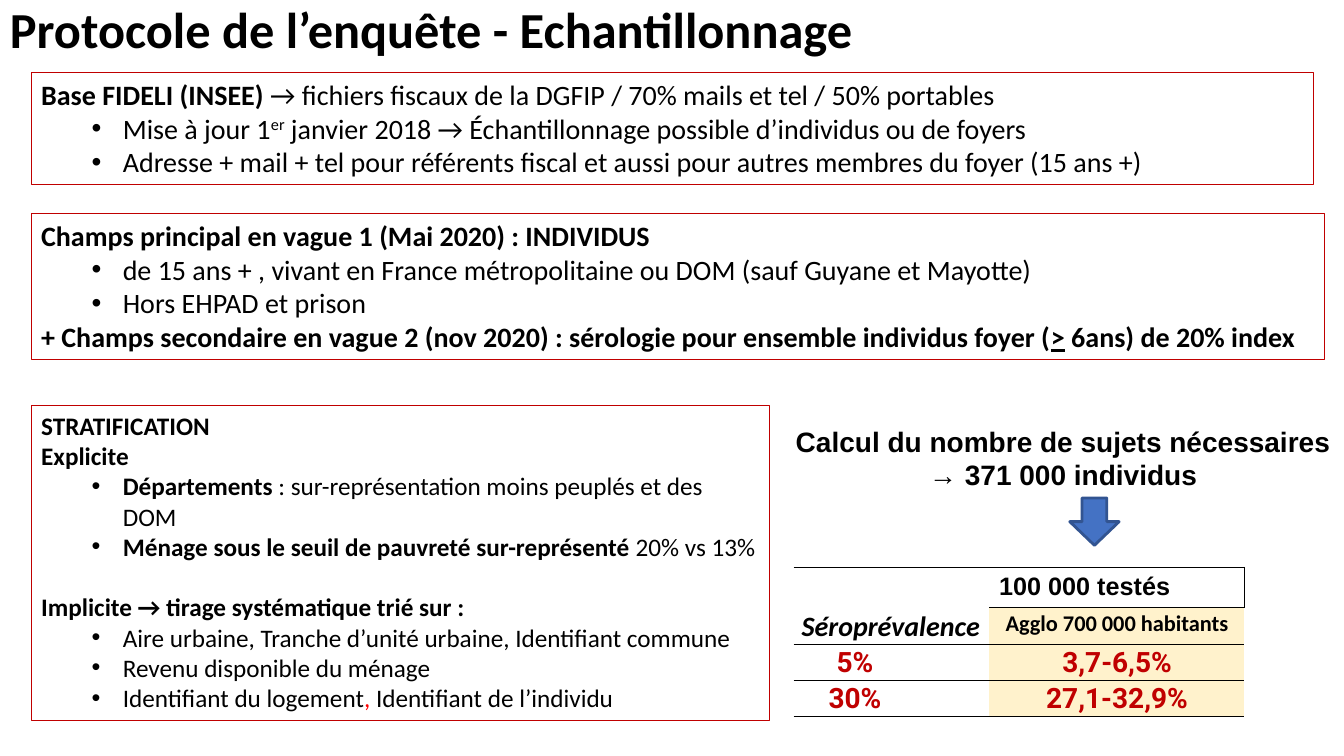
import pptx
import pptx.dml.color
import pptx.enum.shapes
import pptx.enum.text
import pptx.oxml
import pptx.oxml.ns
import pptx.util

PX = 9144  # 100 px to the inch
BLACK, RED, CREAM = "000000", "C00000", "FFF2CC"
LEFT, CENTER = pptx.enum.text.PP_ALIGN.LEFT, pptx.enum.text.PP_ALIGN.CENTER
BOLD = {"bold": True}
SHAPES = pptx.enum.shapes.MSO_SHAPE


def px(length):
    return pptx.util.Emu(length * PX)


def rgb(hex_color):
    return pptx.dml.color.RGBColor.from_string(hex_color)


def drawing_xml(tag, body="", attributes=""):
    return pptx.oxml.parse_xml(
        f'<a:{tag} {pptx.oxml.ns.nsdecls("a")} {attributes}>{body}</a:{tag}>')


def line(*runs, **style):
    """One paragraph: runs are strings or (text, run style) pairs."""
    return runs, style


def bullet(*runs, **style):
    return line(*runs, bulleted=True, **style)


class SlideBuilder:
    def __init__(self, slide, font="Calibri", color=BLACK):
        self.slide, self.font, self.color = slide, font, color

    def paragraph(self, frame, index, runs, size, font=None, color=None, bold=None,
                  italic=None, align=LEFT, spacing=None, before=0, bulleted=False):
        paragraph = frame.paragraphs[0] if index == 0 else frame.add_paragraph()
        paragraph.alignment = align
        paragraph.space_before = pptx.util.Pt(before)
        if spacing:
            paragraph.line_spacing = spacing
        if bulleted:
            properties = paragraph._p.get_or_add_pPr()
            properties.set("marL", str(81 * PX))
            properties.set("indent", str(-31 * PX))
            properties.append(drawing_xml("buFont", attributes='typeface="Arial"'))
            properties.append(drawing_xml("buChar", attributes='char="•"'))
        paragraph.font.name = font or self.font
        paragraph.font.size = pptx.util.Pt(size)
        paragraph.font.color.rgb = rgb(color or self.color)
        paragraph.font.bold = bold
        paragraph.font.italic = italic
        for content in runs:
            text, style = (content, {}) if isinstance(content, str) else content
            run = paragraph.add_run()
            run.text = text
            run.font.bold = style.get("bold")
            run.font.underline = style.get("underline")
            if "color" in style:
                run.font.color.rgb = rgb(style["color"])
            if "baseline" in style:
                run._r.get_or_add_rPr().set("baseline", style["baseline"])

    def fill_text(self, frame, lines, **shared):
        frame.word_wrap = True
        frame.vertical_anchor = pptx.enum.text.MSO_ANCHOR.TOP
        for index, (runs, style) in enumerate(lines):
            self.paragraph(frame, index, runs, **{**shared, **style})

    def text(self, box, lines, **shared):
        label = self.slide.shapes.add_textbox(*map(px, box))
        self.fill_text(label.text_frame, lines, **shared)

    def shape(self, kind, box, outline, width, fill=None):
        shape = self.slide.shapes.add_shape(kind, *map(px, box))
        shape.shadow.inherit = False
        if fill:
            shape.fill.solid()
            shape.fill.fore_color.rgb = rgb(fill)
        else:
            shape.fill.background()
        shape.line.color.rgb = rgb(outline)
        shape.line.width = pptx.util.Pt(width)
        return shape

    def framed_text(self, box, lines, **shared):
        frame = self.shape(SHAPES.RECTANGLE, box, RED, 0.75)
        self.fill_text(frame.text_frame, lines, **shared)

    def table(self, left, top, widths, heights):
        table = self.slide.shapes.add_table(
            len(heights), len(widths), px(left), px(top),
            px(sum(widths)), px(sum(heights))).table
        table.first_row = table.horz_banding = False
        for column, width in zip(table.columns, widths):
            column.width = px(width)
        for row, height in zip(table.rows, heights):
            row.height = px(height)
        return table

    def cell(self, cell, content, borders, insets, fill=None):
        properties = cell._tc.get_or_add_tcPr()
        for side in "LRTB":
            if side in borders:
                stroke = f'<a:solidFill><a:srgbClr val="{BLACK}"/></a:solidFill>'
            else:
                stroke = "<a:noFill/>"
            properties.append(drawing_xml(f"ln{side}", stroke, 'w="12700"'))
        if fill:
            cell.fill.solid()
            cell.fill.fore_color.rgb = rgb(fill)
        else:
            cell.fill.background()
        (cell.margin_left, cell.margin_top,
         cell.margin_right, cell.margin_bottom) = map(px, insets)
        if content:
            self.fill_text(cell.text_frame, [content])


def main():
    presentation = pptx.Presentation()
    presentation.slide_width, presentation.slide_height = px(1333), px(750)
    builder = SlideBuilder(
        presentation.slides.add_slide(presentation.slide_layouts[6]))

    # Title
    builder.text((0, 0, 1150, 60), [line("Protocole de l’enquête - Echantillonnage")],
                 size=36, bold=True, spacing=0.9)

    # Sampling frame
    builder.framed_text((31, 72, 1272, 111), [
        line(("Base FIDELI (INSEE)", BOLD),
             " → fichiers fiscaux de la DGFIP / 70% mails et tel / 50% portables"),
        bullet("Mise à jour 1", ("er", {"baseline": "30000"}),
               " janvier 2018 → Échantillonnage possible d’individus ou de foyers"),
        bullet("Adresse + mail + tel pour référents fiscal et aussi pour autres "
               "membres du foyer (15 ans +)"),
    ], size=20)

    # Survey population
    builder.framed_text((31, 212, 1283, 145), [
        line("Champs principal en vague 1 (Mai 2020) : INDIVIDUS", bold=True),
        bullet("de 15 ans + , vivant en France métropolitaine ou DOM "
               "(sauf Guyane et Mayotte)"),
        bullet("Hors EHPAD et prison"),
        line("+ Champs secondaire en vague 2 (nov 2020) : sérologie pour ensemble "
             "individus foyer (", (">", {"underline": True}),
             " 6ans) de 20% index", bold=True),
    ], size=20)

    # Stratification
    builder.framed_text((31, 402, 732, 313), [
        line("STRATIFICATION", bold=True),
        line("Explicite", bold=True),
        bullet(("Départements ", BOLD),
               ": sur-représentation moins peuplés et des DOM"),
        bullet(("Ménage sous le seuil de pauvreté sur-représenté ", BOLD),
               "20% vs 13%"),
        line("Implicite → tirage systématique trié sur :", bold=True, before=21.6),
        bullet("Aire urbaine, Tranche d’unité urbaine, Identifiant commune"),
        bullet("Revenu disponible du ménage"),
        bullet("Identifiant du logement", (", ", {"color": "FF0000"}),
               "Identifiant de l’individu"),
    ], size=18)

    # Sample size
    builder.text((776, 416, 557, 77), [
        line("Calcul du nombre de sujets nécessaires"),
        line("→ 371 000 individus"),
    ], size=20, font="Arial", bold=True, align=CENTER)
    builder.shape(SHAPES.DOWN_ARROW, (1061, 494, 49, 47), "325491", 2, fill="4472C4")

    # Precision by seroprevalence
    precision = builder.table(787, 563, (194, 253), (39, 36, 36, 36))
    tight, shifted = (8, 0, 7, 0), (8, 0, 80, 0)
    builder.cell(precision.cell(0, 0), None, "T", tight)
    builder.cell(precision.cell(0, 1),
                 line("100 000 testés", size=18, font="Arial", bold=True),
                 "TRB", (10, 5, 10, 5))
    builder.cell(precision.cell(1, 0),
                 line("Séroprévalence", size=20, bold=True, italic=True, spacing=1.07),
                 "B", tight)
    builder.cell(precision.cell(1, 1),
                 line("Agglo 700\u00a0000 habitants".replace("\u00a0", " "), size=16,
                      bold=True, align=CENTER, spacing=1.07), "TB", tight, CREAM)
    figures = {"size": 20, "font": "Roboto", "color": RED, "bold": True,
               "align": CENTER, "spacing": 1.07}
    for row, (rate, interval) in enumerate(
            [("5%", "3,7-6,5%"), ("30%", "27,1-32,9%")], start=2):
        builder.cell(precision.cell(row, 0), line(rate, **figures), "TB", shifted)
        builder.cell(precision.cell(row, 1), line(interval, **figures),
                     "TB", tight, CREAM)

    presentation.save("out.pptx")


if __name__ == "__main__":
    main()
